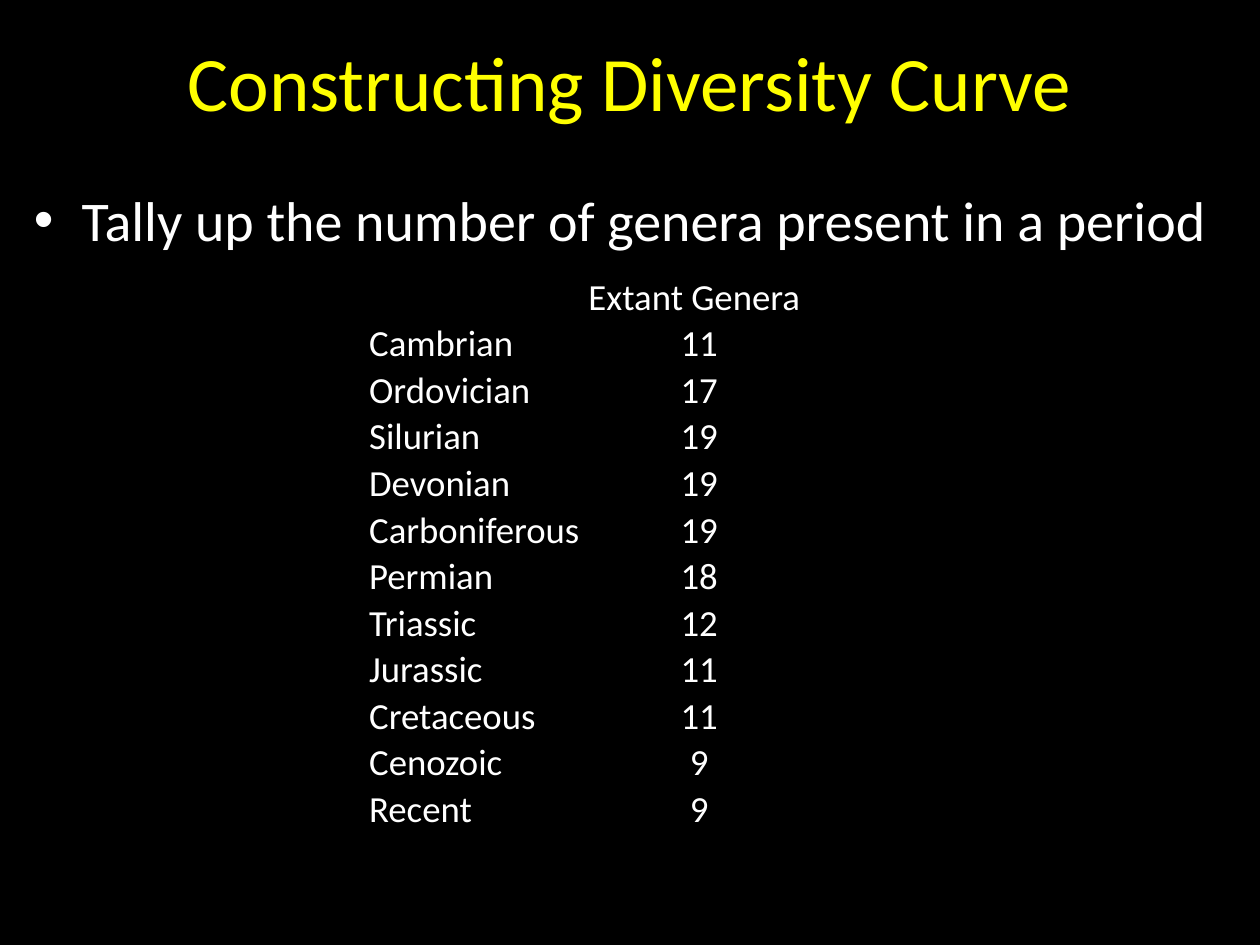
from lxml import etree
from pptx import Presentation
from pptx import util as u
from pptx.dml.color import RGBColor
from pptx.enum import text
from pptx.oxml.ns import qn

NO_GRID_STYLE = "{2D5ABB26-0587-4C30-8999-92F81FD0307C}"

GENERA = [
    ("", "Extant Genera"),
    ("Cambrian", "11"),
    ("Ordovician", "17"),
    ("Silurian", "19"),
    ("Devonian", "19"),
    ("Carboniferous", "19"),
    ("Permian", "18"),
    ("Triassic", "12"),
    ("Jurassic", "11"),
    ("Cretaceous", "11"),
    ("Cenozoic", "9"),
    ("Recent", "9"),
]


def color(hex_string):
    return RGBColor.from_string(hex_string)


class Deck:
    """Holds the style and the current slide; lengths are shares of the slide."""

    FONT, BACK, TITLE, BODY = "Calibri", "000000", "FFFF00", "FFFFFF"

    def __init__(self, width, height):
        self.prs = Presentation()
        self.prs.slide_width, self.prs.slide_height = u.Inches(width), u.Inches(height)
        self.s = self.prs.slides.add_slide(self.prs.slide_layouts[5])
        fill = self.s.background.fill
        fill.solid()
        fill.fore_color.rgb = color(self.BACK)

    def box(self, x, y, w, h):
        width, height = self.prs.slide_width, self.prs.slide_height
        return int(x * width), int(y * height), int(w * width), int(h * height)

    def set_text(self, p, words, size, hex_string, align=text.PP_ALIGN.LEFT):
        p.text = words
        p.alignment = align
        p.font.name, p.font.size = self.FONT, u.Pt(size)
        p.font.color.rgb = color(hex_string)

    def title(self, words, *share):
        sp = self.s.shapes.title
        sp.left, sp.top, sp.width, sp.height = self.box(*share)
        sp.text_frame.vertical_anchor = text.MSO_ANCHOR.MIDDLE
        self.set_text(sp.text_frame.paragraphs[0], words, 44, self.TITLE,
                      text.PP_ALIGN.CENTER)

    def bullet(self, words, *share):
        tf = self.s.shapes.add_textbox(*self.box(*share)).text_frame
        tf.word_wrap = True
        p = tf.paragraphs[0]
        self.set_text(p, words, 32, self.BODY)
        # Hanging bullet
        pPr = p._p.get_or_add_pPr()
        indent = u.Inches(0.38)
        pPr.set("marL", str(indent))
        pPr.set("indent", str(-indent))
        # The bullet comes before the paragraph's default run properties
        pPr.insert(0, etree.Element(qn("a:buChar"), char="•"))
        pPr.insert(0, etree.Element(qn("a:buFont"), typeface="Arial"))

    def table(self, rows, col_shares, x, y, row_share):
        share = (x, y, sum(col_shares), row_share * len(rows))
        frame = self.s.shapes.add_table(len(rows), len(col_shares), *self.box(*share))
        table = frame.table
        table.first_row = table.horz_banding = False
        frame._element.find(".//" + qn("a:tableStyleId")).text = NO_GRID_STYLE
        for column, col_share in zip(table.columns, col_shares):
            column.width = int(col_share * self.prs.slide_width)
        for i, row in enumerate(rows):
            for j, words in enumerate(row):
                centred = i > 0 and j > 0
                self.cell(table.cell(i, j), words, centred)

    def cell(self, cell, words, centred):
        cell.fill.background()
        cell.vertical_anchor = text.MSO_ANCHOR.BOTTOM
        cell.margin_left = cell.margin_right = cell.margin_top = u.Inches(0.01)
        cell.margin_bottom = 0
        align = text.PP_ALIGN.CENTER if centred else text.PP_ALIGN.LEFT
        self.set_text(cell.text_frame.paragraphs[0], words, 21, self.BODY, align)


def main():
    deck = Deck(10, 7.5)
    # Heading
    deck.title("Constructing Diversity Curve", 0.05, 0, 0.9, 0.17)
    # Tally of genera by period
    deck.table(GENERA, (0.174, 0.178), 0.292, 2.17 / 7.5, 0.37 / 7.5)
    # Instruction
    deck.bullet("Tally up the number of genera present in a period",
                0.017, 0.19, 0.967, 0.7)
    deck.prs.save("out.pptx")


if __name__ == "__main__":
    main()
